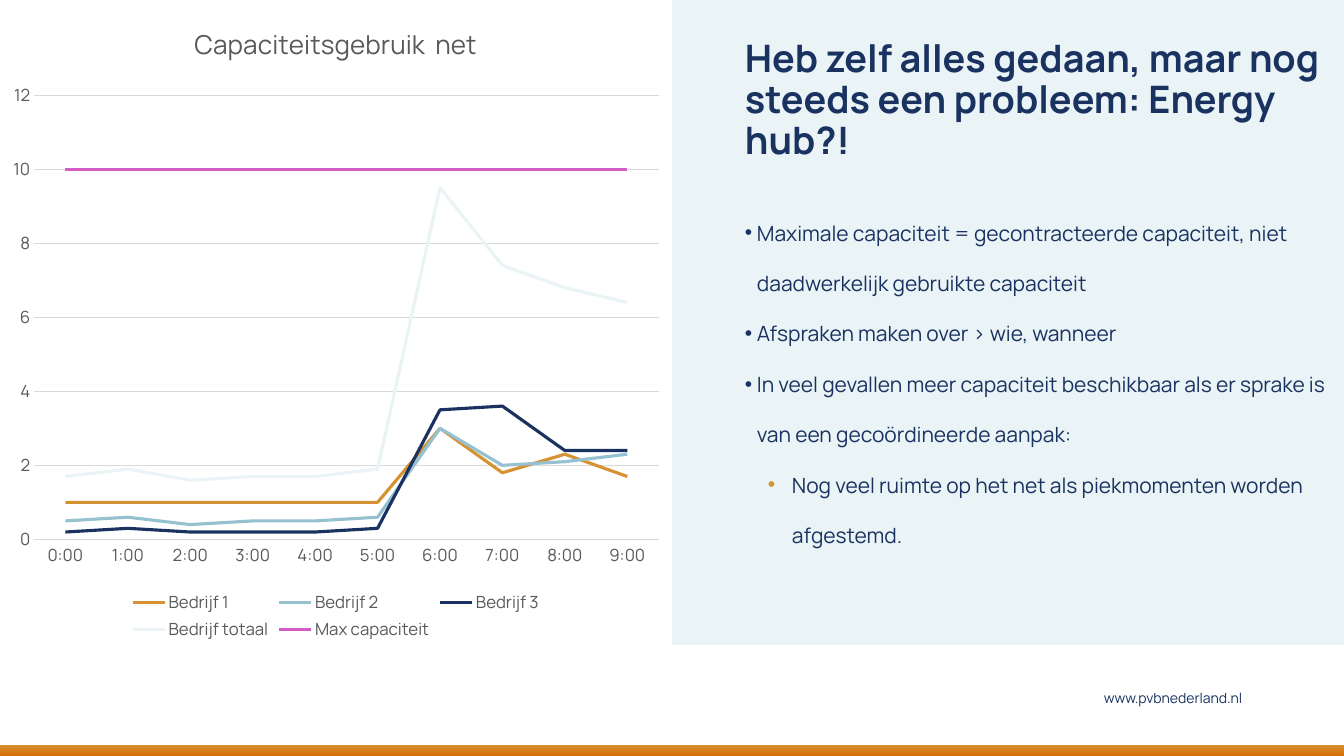
"""Build the slide on grid capacity use and the energy hub."""
import lxml.etree
import pptx
import pptx.chart.data
import pptx.dml.color
import pptx.enum.chart
import pptx.enum.shapes
import pptx.enum.text
import pptx.oxml.ns
import pptx.util

THEME = {
    "font": "Manrope",
    "navy": "1A3260", "orange": "D69133", "dark_orange": "D86D03",
    "blue": "96C1D1", "pale": "EAF3F6", "pink": "D45CC6",
    "grey": "595959", "grid": "D9D9D9",
    "title": 27, "body": 15, "footer": 10, "chart_title": 18.6, "chart_text": 12,
}
EMU_PER_PX = 12192000 / 1344


def px(length):
    return pptx.util.Emu(round(length * EMU_PER_PX))


def style(font, size, color, bold=False):
    font.name = THEME["font"]
    font.size = pptx.util.Pt(THEME[size])
    font.color.rgb = pptx.dml.color.RGBColor.from_string(THEME[color])
    font.bold = bold


presentation = pptx.Presentation()
presentation.slide_width, presentation.slide_height = px(1344), px(756)
slide = presentation.slides.add_slide(presentation.slide_layouts[6])

# Background panels
rectangle = pptx.enum.shapes.MSO_SHAPE.RECTANGLE
bottom_bar = slide.shapes.add_shape(rectangle, px(0), px(745), px(1344), px(11))
bottom_bar.fill.gradient()
bottom_bar.fill.gradient_angle = 270
for stop, position, color in zip(bottom_bar.fill.gradient_stops, (0, 1), ("orange", "dark_orange")):
    stop.position = position
    stop.color.rgb = pptx.dml.color.RGBColor.from_string(THEME[color])
text_panel = slide.shapes.add_shape(rectangle, px(672), px(0), px(672), px(645))
text_panel.fill.solid()
text_panel.fill.fore_color.rgb = pptx.dml.color.RGBColor.from_string(THEME["pale"])
for shape in (bottom_bar, text_panel):
    shape.line.fill.background()
    shape.shadow.inherit = False

# Title and web address
middle = pptx.enum.text.MSO_ANCHOR.MIDDLE
title_frame = slide.shapes.add_textbox(px(745), px(40), px(599), px(123)).text_frame
title_frame.word_wrap = True
title_frame.vertical_anchor = middle
title_frame.margin_left = 0
title = title_frame.paragraphs[0]
title.text = "Heb zelf alles gedaan, maar nog steeds een probleem: Energy hub?!"
title.line_spacing = 0.9
style(title.font, "title", "navy", bold=True)

footer_frame = slide.shapes.add_textbox(px(1087), px(678), px(165), px(40)).text_frame
footer_frame.word_wrap = True
footer_frame.vertical_anchor = middle
footer = footer_frame.paragraphs[0]
footer.text = "www.pvbnederland.nl"
footer.alignment = pptx.enum.text.PP_ALIGN.RIGHT
style(footer.font, "footer", "navy")

# Bullets
body_frame = slide.shapes.add_textbox(px(745), px(195), px(599), px(451)).text_frame
body_frame.word_wrap = True
body_frame.margin_left = body_frame.margin_top = 0
bullet_levels = [(12, 12, "navy"), (47, 24, "orange")]
bullets = [
    (0, "Maximale capaciteit = gecontracteerde capaciteit, niet daadwerkelijk gebruikte capaciteit"),
    (0, "Afspraken maken over > wie, wanneer"),
    (0, "In veel gevallen meer capaciteit beschikbaar als er sprake is van een gecoördineerde aanpak:"),
    (1, "Nog veel ruimte op het net als piekmomenten worden afgestemd."),
]
qn = pptx.oxml.ns.qn
for index, (level, text) in enumerate(bullets):
    paragraph = body_frame.add_paragraph() if index else body_frame.paragraphs[0]
    paragraph.text = text
    paragraph.level = level
    paragraph.line_spacing = 2.0
    margin, hanging, bullet_color = bullet_levels[level]
    properties = paragraph._p.get_or_add_pPr()
    properties.set("marL", str(px(margin)))
    properties.set("indent", str(-px(hanging)))
    color_element = lxml.etree.SubElement(properties, qn("a:buClr"))
    lxml.etree.SubElement(color_element, qn("a:srgbClr"), val=THEME[bullet_color])
    lxml.etree.SubElement(properties, qn("a:buFont"), typeface="Arial")
    lxml.etree.SubElement(properties, qn("a:buChar"), char="•")
    style(paragraph.font, "body", "navy")

# Capacity chart
companies = [
    [1, 1, 1, 1, 1, 1, 3, 1.8, 2.3, 1.7],
    [0.5, 0.6, 0.4, 0.5, 0.5, 0.6, 3, 2, 2.1, 2.3],
    [0.2, 0.3, 0.2, 0.2, 0.2, 0.3, 3.5, 3.6, 2.4, 2.4],
]
chart_data = pptx.chart.data.CategoryChartData()
chart_data.categories = [f"{hour}:00" for hour in range(10)]
for number, values in enumerate(companies, start=1):
    chart_data.add_series(f"Bedrijf {number}", values)
chart_data.add_series("Bedrijf totaal", [round(sum(hour), 1) for hour in zip(*companies)])
chart_data.add_series("Max capaciteit", [10] * 10)
chart = slide.shapes.add_chart(
    pptx.enum.chart.XL_CHART_TYPE.LINE, px(0), px(0), px(672), px(645), chart_data
).chart
style(chart.font, "chart_text", "grey")

chart.has_title = True
chart_title = chart.chart_title.text_frame.paragraphs[0]
chart_title.text = "Capaciteitsgebruik  net"
style(chart_title.font, "chart_title", "grey")
chart.chart_title.include_in_layout = False

chart.has_legend = True
chart.legend.position = pptx.enum.chart.XL_LEGEND_POSITION.BOTTOM
chart.legend.include_in_layout = False
style(chart.legend.font, "chart_text", "grey")

hours, capacity = chart.category_axis, chart.value_axis
for axis in (hours, capacity):
    axis.major_tick_mark = axis.minor_tick_mark = pptx.enum.chart.XL_TICK_MARK.NONE
    style(axis.tick_labels.font, "chart_text", "grey")
capacity.minimum_scale, capacity.maximum_scale, capacity.major_unit = 0, 12, 2
capacity.format.line.fill.background()
for line in (hours.format.line, capacity.major_gridlines.format.line):
    line.width = pptx.util.Pt(0.75)
    line.color.rgb = pptx.dml.color.RGBColor.from_string(THEME["grid"])

chart.plots[0].vary_by_categories = False
for series, color in zip(chart.plots[0].series, ("orange", "blue", "navy", "pale", "pink")):
    series.smooth = False
    series.format.line.width = pptx.util.Pt(2.25)
    series.format.line.color.rgb = pptx.dml.color.RGBColor.from_string(THEME[color])

presentation.save("out.pptx")
